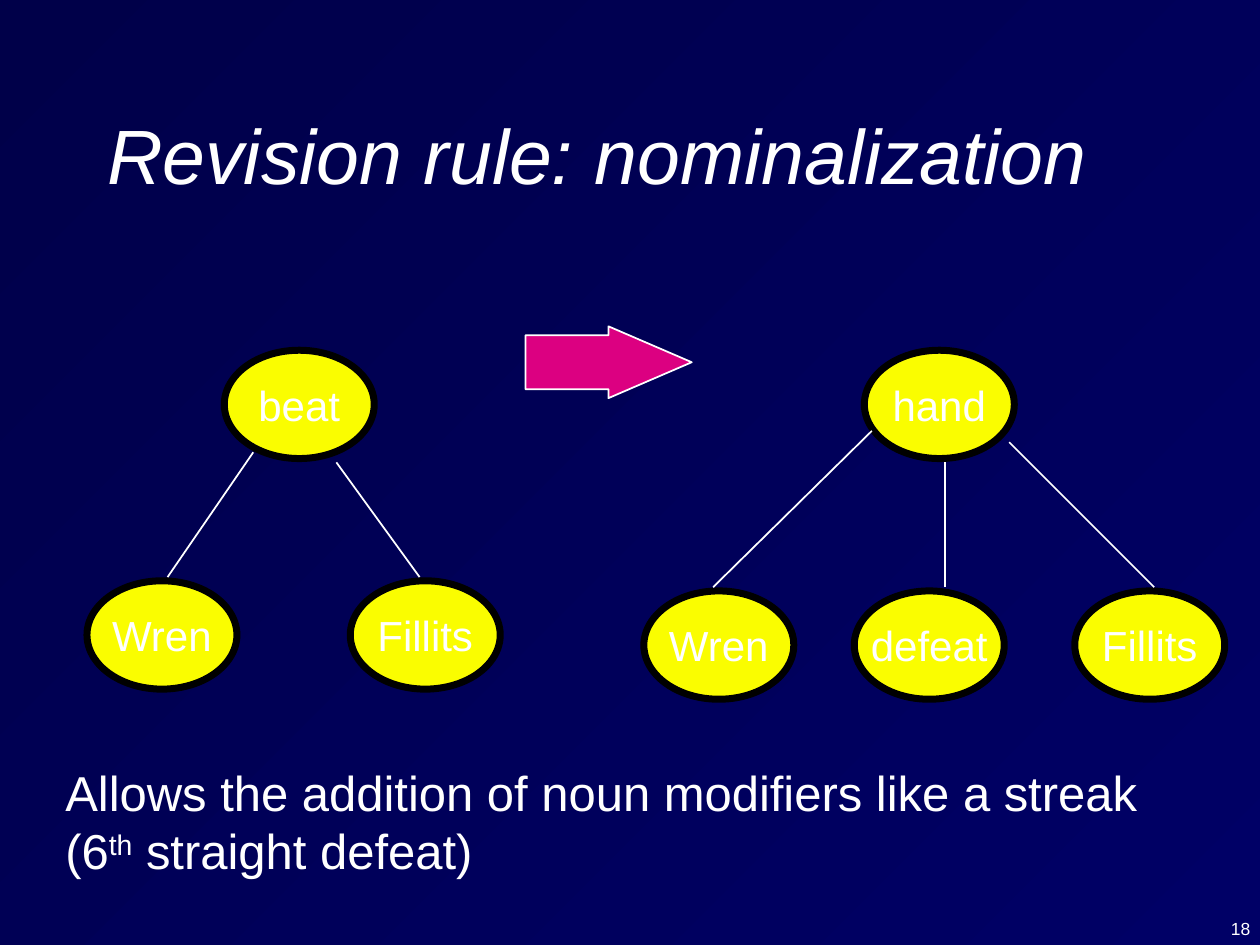
from lxml import etree
from pptx import Presentation
from pptx import util as u
from pptx.dml.color import RGBColor
from pptx.enum import shapes, text
from pptx.oxml.ns import qn

WHITE, BLACK, YELLOW, MAGENTA = "FFFFFF", "000000", "FAFD00", "DC0081"
NODE_W, NODE_H = 1.19, 0.86
WINNER, LOSER = "Wren", "Fillits"


def color(hex_value):
    return RGBColor.from_string(hex_value)


def box(*lengths):
    return [u.Inches(length) for length in lengths]


def set_font(paragraph, size, italic=None):
    font = paragraph.font
    font.name, font.size, font.italic = "Arial", u.Pt(size), italic
    font.color.rgb = color(WHITE)


def style_shape(shape, fill, line, width):
    shape.shadow.inherit = False
    shape.fill.solid()
    shape.fill.fore_color.rgb = color(fill)
    shape.line.color.rgb = color(line)
    shape.line.width = u.Pt(width)


def set_background(slide):
    fill = slide.background.fill
    fill.gradient()
    fill.gradient_angle = 315  # counter-clockwise: runs to the lower right
    for stop, shade in zip(fill.gradient_stops, ("000049", "000066")):
        stop.color.rgb = color(shade)


def add_title(slide, wording):
    title = slide.shapes.title
    title.left, title.top, title.width, title.height = box(0.75, 0.52, 8.5, 1.4)
    frame = title.text_frame
    frame.text = wording
    frame.vertical_anchor = text.MSO_ANCHOR.MIDDLE
    frame.paragraphs[0].alignment = text.PP_ALIGN.LEFT
    set_font(frame.paragraphs[0], 44, italic=True)


def add_node(slide, word, left, top):
    node = slide.shapes.add_shape(
        shapes.MSO_SHAPE.OVAL, *box(left, top, NODE_W, NODE_H))
    style_shape(node, YELLOW, BLACK, 4)
    frame = node.text_frame
    frame.word_wrap = False
    frame.vertical_anchor = text.MSO_ANCHOR.MIDDLE
    frame.text = word
    frame.paragraphs[0].alignment = text.PP_ALIGN.CENTER
    set_font(frame.paragraphs[0], 24)


def add_branch(slide, *ends):
    branch = slide.shapes.add_connector(
        shapes.MSO_CONNECTOR.STRAIGHT, *box(*ends))
    branch.line.color.rgb = color(WHITE)
    branch.line.width = u.Pt(1)
    etree.SubElement(branch._element.spPr, qn("a:effectLst"))


def add_arrow(slide):
    arrow = slide.shapes.add_shape(
        shapes.MSO_SHAPE.RIGHT_ARROW, *box(4.17, 2.59, 1.32, 0.57))
    arrow.adjustments[0], arrow.adjustments[1] = 0.75, 1.16
    style_shape(arrow, MAGENTA, WHITE, 1)


def add_text(slide, place, size, parts, wrap=True):
    """Write (wording, is_superscript) parts as one paragraph."""
    frame = slide.shapes.add_textbox(*box(*place)).text_frame
    frame.word_wrap = wrap
    paragraph = frame.paragraphs[0]
    set_font(paragraph, size)
    for wording, superscript in parts:
        run = paragraph.add_run()
        run.text = wording
        if superscript:
            run._r.get_or_add_rPr().set("baseline", "30000")


def main():
    deck = Presentation()
    deck.slide_width, deck.slide_height = box(10, 7.5)
    slide = deck.slides.add_slide(deck.slide_layouts[5])
    set_background(slide)
    add_text(slide, (9.67, 7.24, 0.41, 0.26), 10, [("18", False)], wrap=False)
    add_title(slide, "Revision rule: nominalization")

    # Verb tree on the left, noun tree on the right
    nodes = [
        ("beat", 1.78, 2.78), (WINNER, 0.69, 4.61), (LOSER, 2.78, 4.61),
        ("hand", 6.86, 2.78), (WINNER, 5.11, 4.69), ("defeat", 6.78, 4.69),
        (LOSER, 8.53, 4.69),
    ]
    for word, left, top in nodes:
        add_node(slide, word, left, top)

    # Branches end near the ovals, not on their connection sites
    branches = [
        (2.01, 3.59, 1.33, 4.58), (2.67, 3.67, 3.33, 4.58),
        (6.92, 3.42, 5.66, 4.66), (7.5, 3.67, 7.5, 4.66),
        (8.01, 3.51, 9.16, 4.66),
    ]
    for ends in branches:
        add_branch(slide, *ends)

    add_arrow(slide)

    # Remark below the trees
    add_text(slide, (0.42, 6, 9.17, 1.03), 28, [
        ("Allows the addition of noun modifiers like a streak (6", False),
        ("th", True),
        (" straight defeat)", False),
    ])
    deck.save("out.pptx")


if __name__ == "__main__":
    main()
